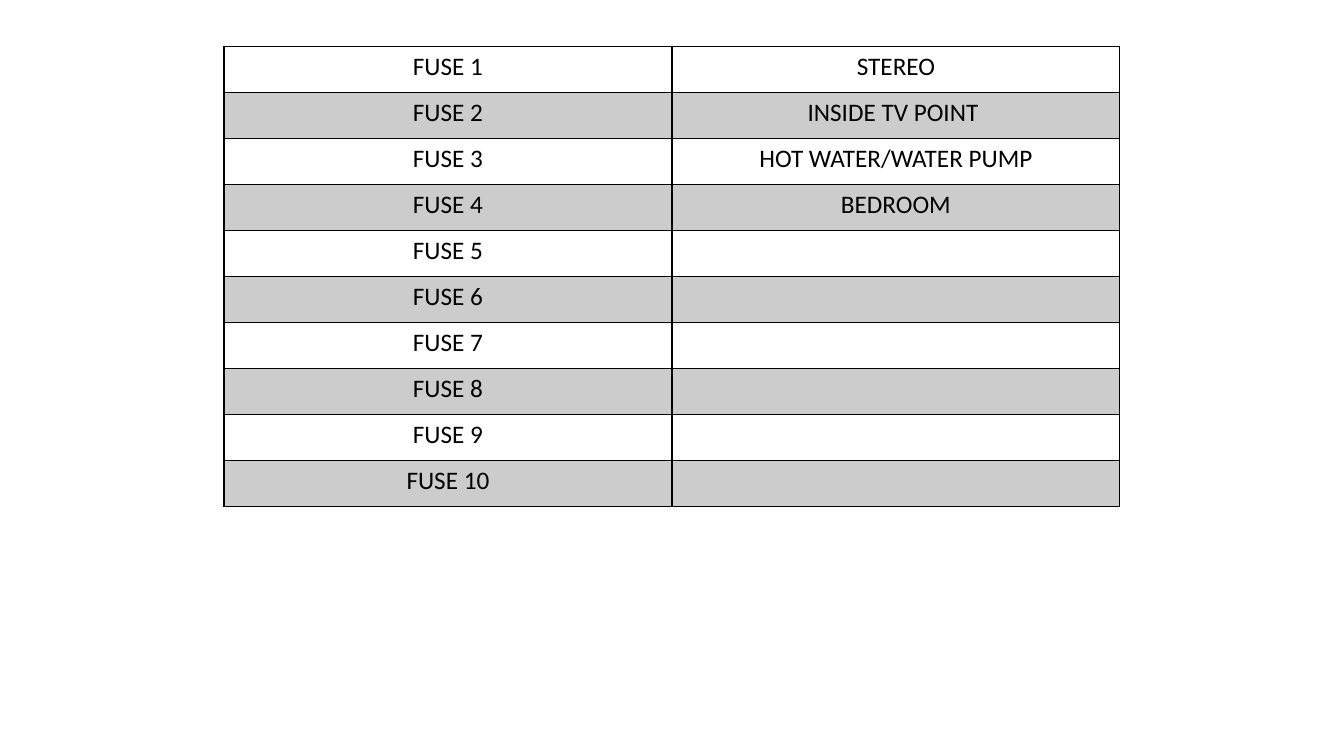
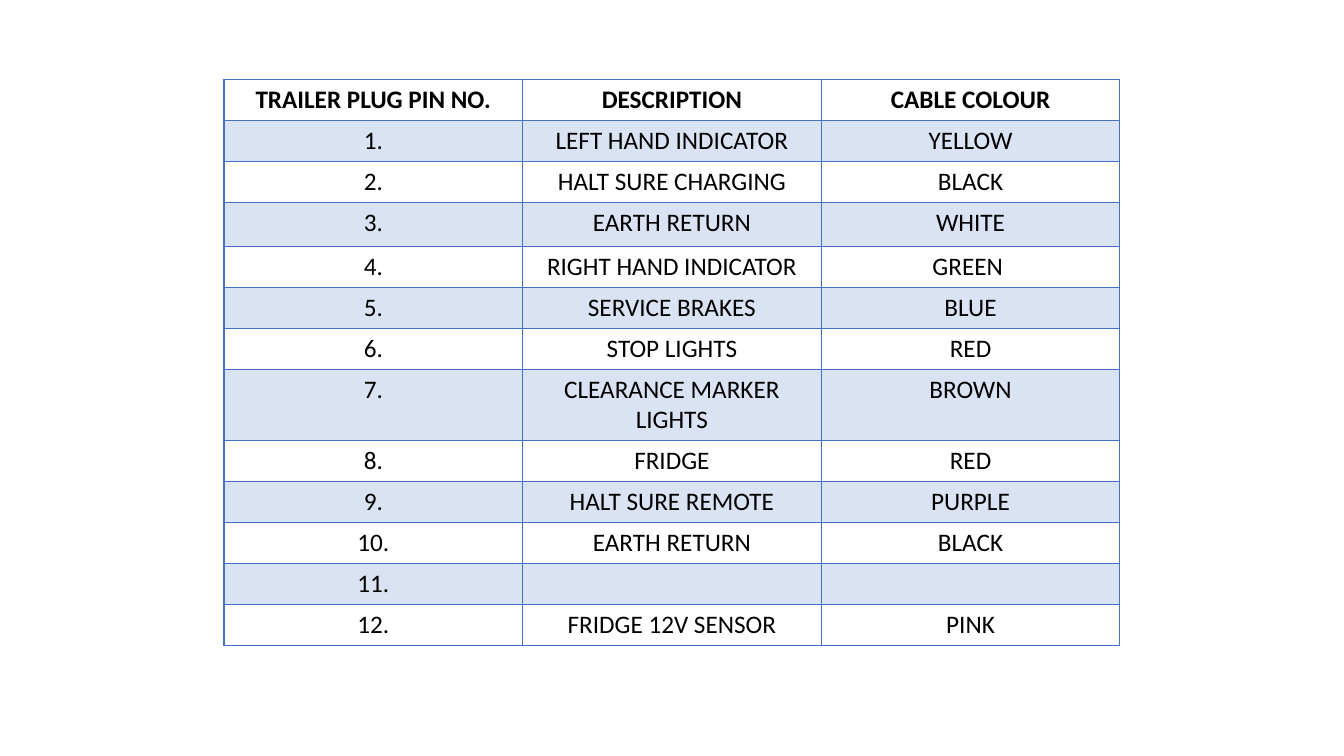
from lxml.etree import SubElement
from pptx import Presentation
from pptx.dml.color import RGBColor
from pptx.enum.text import PP_ALIGN
from pptx.oxml.ns import qn
from pptx.util import Pt

COLOURS = {
    "text": "000000",
    "paper": "FFFFFF",
    "fuse_line": "000000",
    "fuse_band": "CCCCCC",
    "plug_line": "4472C4",
    "plug_band": "DAE3F3",
}
FONT_NAME = "Calibri"
FONT_SIZE = 18
BORDER_WIDTH = 1
TABLE_LEFT = 160
TABLE_WIDTH = 640

FUSE_USES = ["STEREO", "INSIDE TV POINT ", "HOT WATER/WATER PUMP", "BEDROOM"] + [""] * 6
FUSE_ROWS = [(f"FUSE {number}", use) for number, use in enumerate(FUSE_USES, 1)]

PLUG_HEADER = ("TRAILER PLUG PIN NO.", "DESCRIPTION", "CABLE COLOUR")
PLUG_PINS = [
    ("LEFT HAND INDICATOR", "YELLOW"),
    ("HALT SURE CHARGING", "BLACK"),
    ("EARTH RETURN", "WHITE"),
    ("RIGHT HAND INDICATOR", "GREEN "),
    ("SERVICE BRAKES", "BLUE"),
    ("STOP LIGHTS", "RED"),
    ("CLEARANCE MARKER LIGHTS", "BROWN"),
    ("FRIDGE", "RED"),
    ("HALT SURE REMOTE", "PURPLE"),
    ("EARTH RETURN", "BLACK"),
    ("", ""),
    ("FRIDGE 12V SENSOR", "PINK"),
]
PLUG_ROWS = [PLUG_HEADER] + [(f"{number}.", *pin) for number, pin in enumerate(PLUG_PINS, 1)]


def rgb(name):
    return RGBColor.from_string(COLOURS[name])


def add_borders(cell, colour):
    properties = cell._tc.get_or_add_tcPr()
    for position, side in enumerate(("lnL", "lnR", "lnT", "lnB")):
        line = SubElement(properties, qn(f"a:{side}"), w=str(Pt(BORDER_WIDTH)))
        fill = SubElement(line, qn("a:solidFill"))
        SubElement(fill, qn("a:srgbClr"), val=COLOURS[colour])
        properties.insert(position, line)


def write_cell(cell, text, bold):
    paragraph = cell.text_frame.paragraphs[0]
    paragraph.alignment = PP_ALIGN.CENTER
    paragraph.font.size = Pt(FONT_SIZE)
    if text:
        run = paragraph.add_run()
        run.text = text
        run.font.name = FONT_NAME
        run.font.size = Pt(FONT_SIZE)
        run.font.bold = bold
        run.font.color.rgb = rgb("text")


def add_banded_table(slide, box, rows, heights, scheme, has_header=False):
    left, top, width = box
    column_count = len(rows[0])
    frame = slide.shapes.add_table(
        len(rows), column_count, Pt(left), Pt(top), Pt(width), Pt(sum(heights))
    )
    table = frame.table
    table.first_row = has_header
    table.horz_banding = False
    for column in table.columns:
        column.width = Pt(width / column_count)
    for row_index, texts in enumerate(rows):
        table.rows[row_index].height = Pt(heights[row_index])
        fill_name = f"{scheme}_band" if row_index % 2 else "paper"
        for column_index, text in enumerate(texts):
            cell = table.cell(row_index, column_index)
            cell.fill.solid()
            cell.fill.fore_color.rgb = rgb(fill_name)
            add_borders(cell, f"{scheme}_line")
            write_cell(cell, text, has_header and row_index == 0)


def add_fuse_slide(presentation):
    slide = presentation.slides.add_slide(presentation.slide_layouts[6])
    heights = [32.9] * len(FUSE_ROWS)
    add_banded_table(slide, (TABLE_LEFT, 33, TABLE_WIDTH), FUSE_ROWS, heights, "fuse")


def add_plug_slide(presentation):
    slide = presentation.slides.add_slide(presentation.slide_layouts[6])
    heights = [29.25] * len(PLUG_ROWS)
    heights[3] = 31.5
    heights[7] = 51
    box = (TABLE_LEFT, 56.8, TABLE_WIDTH)
    add_banded_table(slide, box, PLUG_ROWS, heights, "plug", has_header=True)


def main():
    presentation = Presentation()
    presentation.slide_width = Pt(960)
    presentation.slide_height = Pt(540)
    add_fuse_slide(presentation)
    add_plug_slide(presentation)
    presentation.save("out.pptx")


if __name__ == "__main__":
    main()
